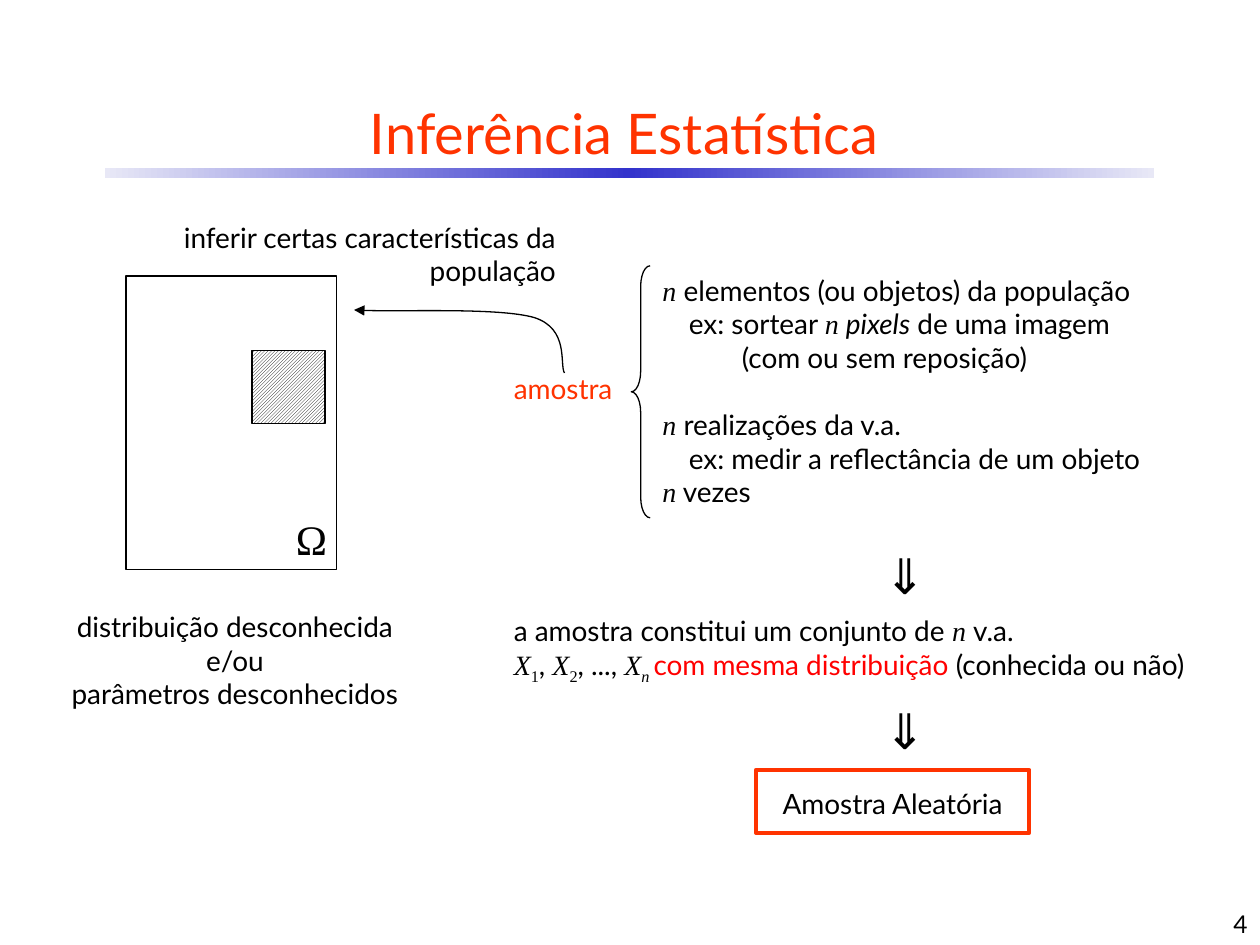
from copy import deepcopy
from pptx import Presentation
from pptx.dml.color import RGBColor
from pptx.enum.dml import MSO_PATTERN
from pptx.enum.shapes import MSO_SHAPE as SHAPE
from pptx.enum.text import MSO_ANCHOR as ANCHOR, MSO_AUTO_SIZE as AUTO, PP_ALIGN as ALIGN
from pptx.oxml.ns import qn
from pptx.oxml.xmlchemy import OxmlElement
from pptx.util import Inches, Pt

COLORS = {"ink": "000000", "paper": "FFFFFF", "accent": "FF3300", "red": "FF0000",
          "bar": "3333CC", "bar_end": "E8E8F6"}
BODY, MATH = "Lato", "Times New Roman"


def rgb(name):
    return RGBColor.from_string(COLORS[name])


def run(text, font=BODY, italic=False, sub=False, color="ink"):
    return text, font, italic, sub, color


def math(text, sub=False):
    return run(text, MATH, True, sub)


def index(text):
    return run(text, MATH, sub=True)


class SlideBuilder:
    """Holds the current slide and its drawing style."""

    def __init__(self, prs):
        self.s = prs.slides.add_slide(prs.slide_layouts[5])

    def add_runs(self, tf, paragraphs, size, align):
        for i, runs in enumerate(paragraphs):
            p = tf.paragraphs[0] if i == 0 else tf.add_paragraph()
            p.alignment = align
            for text, font, italic, sub, color in runs:
                if text == "\n":
                    p.add_line_break()
                    continue
                r = p.add_run()
                r.text = text
                r.font.name, r.font.size = font, Pt(size)
                r.font.italic = italic
                r.font.color.rgb = rgb(color)
                if sub:
                    r._r.get_or_add_rPr().set("baseline", "-25000")

    def title(self, box, text):
        sp = self.s.shapes.title
        sp.left, sp.top, sp.width, sp.height = map(Inches, box)
        sp.text_frame.vertical_anchor = ANCHOR.MIDDLE
        self.add_runs(sp.text_frame, [[run(text, color="accent")]], 32, ALIGN.CENTER)

    def text(self, box, paragraphs, size=16, align=ALIGN.LEFT, wrap=True,
             anchor=ANCHOR.TOP, auto=AUTO.SHAPE_TO_FIT_TEXT):
        tf = self.s.shapes.add_textbox(*map(Inches, box)).text_frame
        tf.word_wrap, tf.auto_size, tf.vertical_anchor = wrap, auto, anchor
        self.add_runs(tf, paragraphs, size, align)
        return tf

    def outline(self, sp, color="ink", width=0.75):
        sp.shadow.inherit = False
        sp.fill.background()
        sp.line.color.rgb = rgb(color)
        sp.line.width = Pt(width)
        return sp

    def shape(self, box, kind=SHAPE.RECTANGLE, color="ink", width=0.75):
        return self.outline(self.s.shapes.add_shape(kind, *map(Inches, box)), color, width)

    def hatched(self, box):
        fill = self.shape(box).fill
        fill.patterned()
        fill.pattern = MSO_PATTERN.LIGHT_UPWARD_DIAGONAL
        fill.fore_color.rgb, fill.back_color.rgb = rgb("ink"), rgb("paper")

    def gradient_bar(self, box):
        sp = self.shape(box)
        sp.line.fill.background()
        sp.fill.gradient()
        sp.fill.gradient_angle = 0
        stops = sp._element.spPr.find(".//" + qn("a:gsLst"))
        stops.append(deepcopy(stops[-1]))
        for stop, pos, color in zip(sp.fill.gradient_stops, (0, 0.5, 1),
                                    ("bar_end", "bar", "bar_end")):
            stop.position, stop.color.rgb = pos, rgb(color)

    def curved_arrow(self, start, points):
        fb = self.s.shapes.build_freeform(*map(Inches, start))
        fb.add_line_segments([tuple(map(Inches, pt)) for pt in points], close=False)
        sp = self.outline(fb.convert_to_shape())
        lines = list(sp._element.iter(qn("a:lnTo")))
        for i in range(0, len(lines), 3):
            curve = OxmlElement("a:cubicBezTo")
            lines[i].addprevious(curve)
            for line in lines[i:i + 3]:
                curve.append(line[0])
                line.getparent().remove(line)
        tail = OxmlElement("a:tailEnd")
        tail.set("type", "triangle")
        sp._element.spPr.find(qn("a:ln")).append(tail)


def main():
    prs = Presentation()
    prs.slide_width, prs.slide_height = Inches(10), Inches(7.5)
    b = SlideBuilder(prs)

    b.gradient_bar((0.83, 1.33, 8.33, 0.08))
    b.title((0.33, 0.67, 9.25, 0.75), "Inferência Estatística")

    b.shape((1, 2.19, 1.67, 2.33))
    b.text((2.25, 4.03, 0.46, 0.51), [[run("Ω", MATH)]], 24, wrap=False)
    b.hatched((2, 2.78, 0.58, 0.58))
    b.text((0.45, 4.79, 2.83, 0.91),
           [[run(line)] for line in ("distribuição desconhecida", "e/ou",
                                     "parâmetros desconhecidos")],
           align=ALIGN.CENTER, wrap=False)

    b.text((3.98, 2.9, 1.04, 0.37), [[run("amostra", color="accent")]], wrap=False)
    b.curved_arrow((4.48, 2.96), [(4.44, 2.89), (4.52, 2.61), (4.24, 2.52),
                                  (3.96, 2.44), (3.11, 2.48), (2.81, 2.46)])
    b.text((1.09, 1.7, 3.42, 0.64),
           [[run("inferir certas características da população")]], align=ALIGN.RIGHT)

    brace = b.shape((5.01, 2.11, 0.15, 2), SHAPE.LEFT_BRACE)
    brace.adjustments[0], brace.adjustments[1] = 1.079, 0.5
    tf = b.text((5.16, 2.12, 4.43, 1.97), [
        [math("n"), run(" elementos (ou objetos) da população")],
        [run("ex: sortear "), math("n "), run("pixels", italic=True), run(" de uma imagem")],
        [run("(com ou sem reposição)")],
        [math("n"), run(" realizações da v.a.")],
        [run("ex: medir a reflectância de um objeto"), run("\n"), math("n"), run(" vezes")],
    ])
    for p, indent in zip(tf.paragraphs, (0, 0.21, 0.63, 0, 0.21)):
        p._p.get_or_add_pPr().set("indent", str(Inches(indent)))
    tf.paragraphs[3].space_before = Pt(19.2)

    for top in (4.28, 5.51):
        b.text((6.92, top, 0.44, 0.57), [[run("⇓")]], 28, wrap=False)
    b.text((3.98, 4.82, 5.93, 0.64), [
        [run("a amostra constitui um conjunto de "), math("n "), run("v.a.")],
        [math("X"), index("1"), run(", "), math("X"), index("2"), run(", ..., "),
         math("X"), math("n ", sub=True), run("com mesma distribuição ", color="red"),
         run("(conhecida ou não)")],
    ])

    b.text((5.86, 6.19, 2.45, 0.37), [[run("Amostra Aleatória")]], align=ALIGN.CENTER)
    b.shape((6, 6.11, 2.17, 0.5), color="accent", width=2.25)
    b.text((7.92, 7, 2.08, 0.5), [[run("4")]], 14, ALIGN.RIGHT,
           anchor=ANCHOR.BOTTOM, auto=AUTO.NONE)
    prs.save("out.pptx")


if __name__ == "__main__":
    main()
